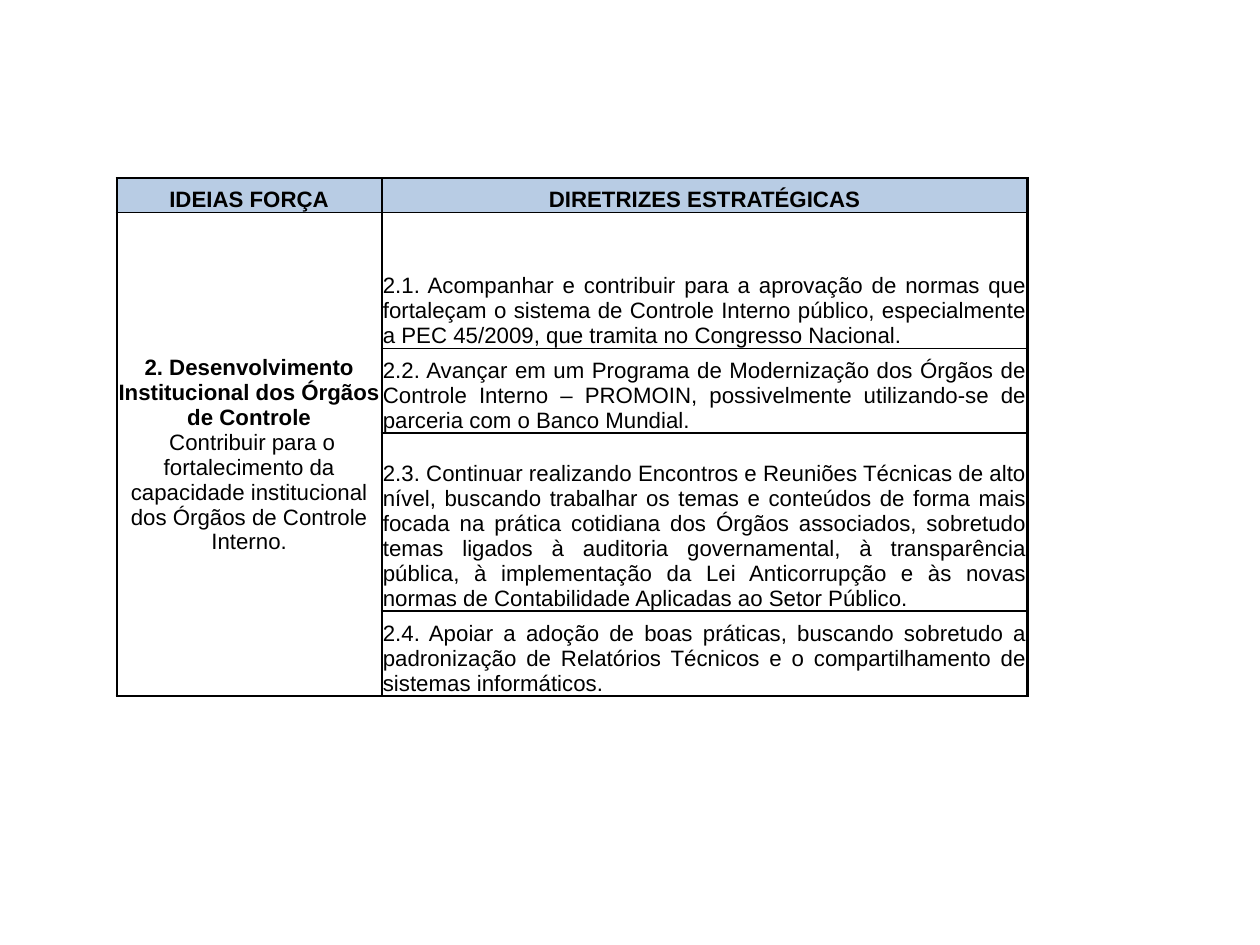
from lxml.etree import SubElement
from pptx import Presentation
from pptx.dml.color import RGBColor
from pptx.enum.text import MSO_ANCHOR, PP_ALIGN
from pptx.oxml.ns import qn
from pptx.util import Inches, Pt

CM_PER_INCH = 2.54
SLIDE_WIDTH_CM, SLIDE_HEIGHT_CM = 28, 21
COLORS = {"text": "000000", "border": "000000", "header": "B8CCE4"}
COLUMN_WIDTHS = [2.32, 5.65]
ROW_HEIGHTS = [0.3, 1.19, 0.74, 1.56, 0.74]
THIN, THICK = 1, 1.5
# Widths of the horizontal rules, from the top of the table to its foot
RULES = {
    "ideas": [THICK, THIN, THIN, THIN, THIN, THIN],
    "guidelines": [THICK, THIN, THIN, THIN, THICK, THICK],
}

HEADERS = ["IDEIAS FORÇA", "DIRETRIZES ESTRATÉGICAS"]
IDEA_TITLE = "2. Desenvolvimento Institucional dos Órgãos de Controle"
IDEA_GOAL = (
    " Contribuir para o fortalecimento da capacidade institucional "
    "dos Órgãos de Controle Interno."
)
GUIDELINES = [
    "2.1. Acompanhar e contribuir para a aprovação de normas que fortaleçam "
    "o sistema de Controle Interno público, especialmente a PEC 45/2009, "
    "que tramita no Congresso Nacional.",
    "2.2. Avançar em um Programa de Modernização dos Órgãos de Controle "
    "Interno – PROMOIN, possivelmente utilizando-se de parceria com o "
    "Banco Mundial.",
    "2.3. Continuar realizando Encontros e Reuniões Técnicas de alto nível, "
    "buscando trabalhar os temas e conteúdos de forma mais focada na prática "
    "cotidiana dos Órgãos associados, sobretudo temas ligados à auditoria "
    "governamental, à transparência pública, à implementação da Lei "
    "Anticorrupção e às novas normas de Contabilidade Aplicadas ao Setor "
    "Público.",
    "2.4. Apoiar a adoção de boas práticas, buscando sobretudo a padronização "
    "de Relatórios Técnicos e o compartilhamento de sistemas informáticos.",
]


class StrategySlide:
    def __init__(self, slide, font="Arial", size=14):
        self.slide = slide
        self.font = font
        self.size = size

    def table(self, left, top, widths, heights):
        frame = self.slide.shapes.add_table(
            len(heights), len(widths), Inches(left), Inches(top),
            Inches(sum(widths)), Inches(sum(heights)),
        )
        table = frame.table
        table.first_row = table.horz_banding = False
        for column, width in zip(table.columns, widths):
            column.width = Inches(width)
        for row, height in zip(table.rows, heights):
            row.height = Inches(height)
        return table

    def borders(self, cell, top, bottom):
        properties = cell._tc.get_or_add_tcPr()
        sides = {"a:lnL": THICK, "a:lnR": THICK, "a:lnT": top, "a:lnB": bottom}
        for side, width in sides.items():
            line = SubElement(properties, qn(side), w=str(Pt(width)))
            fill = SubElement(line, qn("a:solidFill"))
            SubElement(fill, qn("a:srgbClr"), val=COLORS["border"])

    def fill(self, cell, color=None):
        if color:
            cell.fill.solid()
            cell.fill.fore_color.rgb = RGBColor.from_string(COLORS[color])
        else:
            cell.fill.background()

    def text(self, cell, text, align, anchor=MSO_ANCHOR.BOTTOM, bold=False):
        cell.margin_left = cell.margin_right = cell.margin_top = Inches(0.01)
        cell.margin_bottom = 0
        cell.vertical_anchor = anchor
        paragraph = cell.text_frame.paragraphs[0]
        paragraph.add_run().text = text
        paragraph.alignment = align
        font = paragraph.font
        font.name, font.size, font.bold = self.font, Pt(self.size), bold
        font.color.rgb = RGBColor.from_string(COLORS["text"])
        return paragraph


def main():
    presentation = Presentation()
    presentation.slide_width = Inches(SLIDE_WIDTH_CM / CM_PER_INCH)
    presentation.slide_height = Inches(SLIDE_HEIGHT_CM / CM_PER_INCH)
    page = StrategySlide(presentation.slides.add_slide(presentation.slide_layouts[6]))

    strategy = page.table(1.02, 1.56, COLUMN_WIDTHS, ROW_HEIGHTS)
    for column, rules in enumerate(RULES.values()):
        for row in range(len(ROW_HEIGHTS)):
            cell = strategy.cell(row, column)
            page.borders(cell, rules[row], rules[row + 1])
            page.fill(cell, "header" if row == 0 else None)

    for column, header in enumerate(HEADERS):
        page.text(strategy.cell(0, column), header, PP_ALIGN.CENTER, bold=True)

    idea_cell = strategy.cell(1, 0)
    idea_cell.merge(strategy.cell(len(GUIDELINES), 0))
    idea = page.text(idea_cell, IDEA_TITLE, PP_ALIGN.CENTER, MSO_ANCHOR.MIDDLE)
    idea.runs[0].font.bold = True
    idea.add_line_break()
    idea.add_run().text = IDEA_GOAL

    for row, guideline in enumerate(GUIDELINES, start=1):
        page.text(strategy.cell(row, 1), guideline, PP_ALIGN.JUSTIFY)

    presentation.save("out.pptx")


if __name__ == "__main__":
    main()
